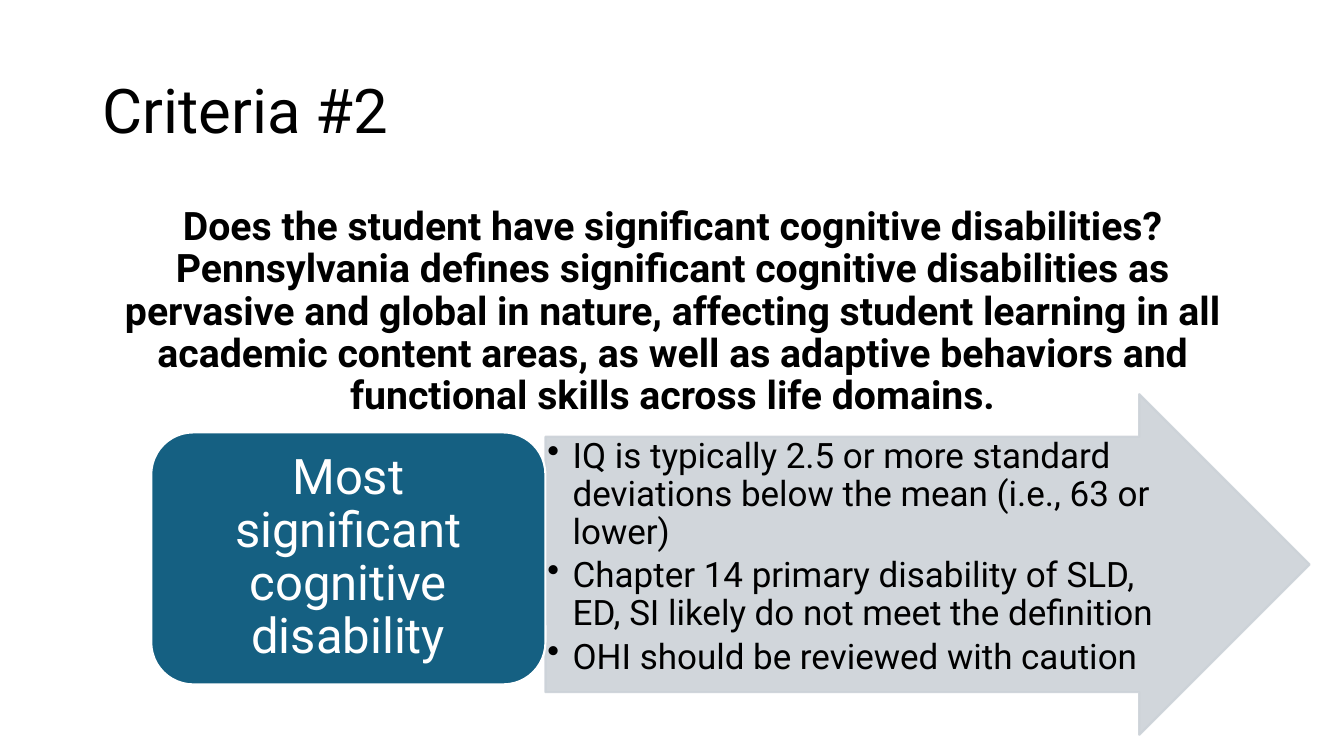
from dataclasses import dataclass

from lxml import etree
from pptx import Presentation
from pptx import util as u
from pptx.dml.color import RGBColor
from pptx.enum import shapes, text
from pptx.oxml import ns

PX_PER_INCH = 100


@dataclass(frozen=True)
class Theme:
    font: str = "Roboto"
    ink: str = "000000"
    paper: str = "FFFFFF"
    label_fill: str = "156082"
    arrow_fill: str = "CCD2D8"
    arrow_opacity: int = 90
    title_size: int = 44
    definition_size: int = 28
    label_size: int = 35
    bullet_size: int = 25
    line_spacing: float = 0.9
    bullet_gap: int = 4
    outline: float = 1.5


THEME = Theme()


def px(length):
    return u.Emu(length * u.Inches(1) // PX_PER_INCH)


def add_run(para, words, size, color, bold=False):
    para.line_spacing = THEME.line_spacing
    span = para.add_run()
    span.text = words
    span.font.name = THEME.font
    span.font.size = u.Pt(size)
    span.font.bold = bold
    span.font.color.rgb = RGBColor.from_string(color)


def set_frame(frame, anchor, side, edge):
    frame.word_wrap = True
    frame.vertical_anchor = anchor
    frame.margin_left = frame.margin_right = px(side)
    frame.margin_top = frame.margin_bottom = px(edge)


def add_text(page, bounds, words, size, align, anchor, bold=False):
    box = page.shapes.add_textbox(*map(px, bounds))
    set_frame(box.text_frame, anchor, 10, 5)
    para = box.text_frame.paragraphs[0]
    para.alignment = align
    add_run(para, words, size, THEME.ink, bold)


def set_opacity(color_format_parent, percent):
    for color in color_format_parent.iter(ns.qn("a:srgbClr")):
        alpha = etree.SubElement(color, ns.qn("a:alpha"))
        alpha.set("val", str(percent * 1000))


def add_block(page, kind, bounds, fill, line):
    block = page.shapes.add_shape(kind, *map(px, bounds))
    block.shadow.inherit = False
    block.fill.solid()
    block.fill.fore_color.rgb = RGBColor.from_string(fill)
    block.line.color.rgb = RGBColor.from_string(line)
    block.line.width = u.Pt(THEME.outline)
    return block


def add_bullet(para, indent):
    props = para._p.get_or_add_pPr()
    props.set("marL", str(px(indent)))
    props.set("indent", str(-px(indent)))
    etree.SubElement(props, ns.qn("a:buChar")).set("char", "•")


def add_arrow(page, bounds, items):
    arrow = add_block(page, shapes.MSO_SHAPE.RIGHT_ARROW, bounds,
                      THEME.arrow_fill, THEME.arrow_fill)
    arrow.adjustments[0] = 0.75
    arrow.adjustments[1] = 0.5
    set_opacity(arrow._element.spPr, THEME.arrow_opacity)
    frame = arrow.text_frame
    set_frame(frame, text.MSO_ANCHOR.TOP, 2, 2)
    for index, item in enumerate(items):
        para = frame.add_paragraph() if index else frame.paragraphs[0]
        add_bullet(para, 25)
        para.alignment = text.PP_ALIGN.LEFT
        para.space_after = u.Pt(THEME.bullet_gap)
        add_run(para, item, THEME.bullet_size, THEME.ink)


def add_label(page, bounds, words):
    label = add_block(page, shapes.MSO_SHAPE.ROUNDED_RECTANGLE, bounds,
                      THEME.label_fill, THEME.paper)
    set_frame(label.text_frame, text.MSO_ANCHOR.MIDDLE, 15, 7)
    para = label.text_frame.paragraphs[0]
    para.alignment = text.PP_ALIGN.CENTER
    add_run(para, words, THEME.label_size, THEME.paper)


def main():
    deck = Presentation()
    deck.slide_width, deck.slide_height = px(1333), px(750)
    page = deck.slides.add_slide(deck.slide_layouts[6])

    add_text(page, (92, 40, 1150, 145), "Criteria #2", THEME.title_size,
             text.PP_ALIGN.LEFT, text.MSO_ANCHOR.MIDDLE)
    add_text(page, (92, 200, 1150, 476),
             "Does the student have significant cognitive disabilities? "
             "Pennsylvania defines significant cognitive disabilities as "
             "pervasive and global in nature, affecting student learning in "
             "all academic content areas, as well as adaptive behaviors and "
             "functional skills across life domains.",
             THEME.definition_size, text.PP_ALIGN.CENTER,
             text.MSO_ANCHOR.TOP, bold=True)
    add_arrow(page, (541, 391, 758, 338), (
        "IQ is typically 2.5 or more standard deviations below the mean "
        "(i.e., 63 or lower)",
        "Chapter 14 primary disability of SLD, ED, SI likely do not meet "
        "the definition",
        "OHI should be reviewed with caution",
    ))
    add_label(page, (150, 429, 391, 250),
              "Most significant cognitive disability")

    deck.save("out.pptx")


if __name__ == "__main__":
    main()
